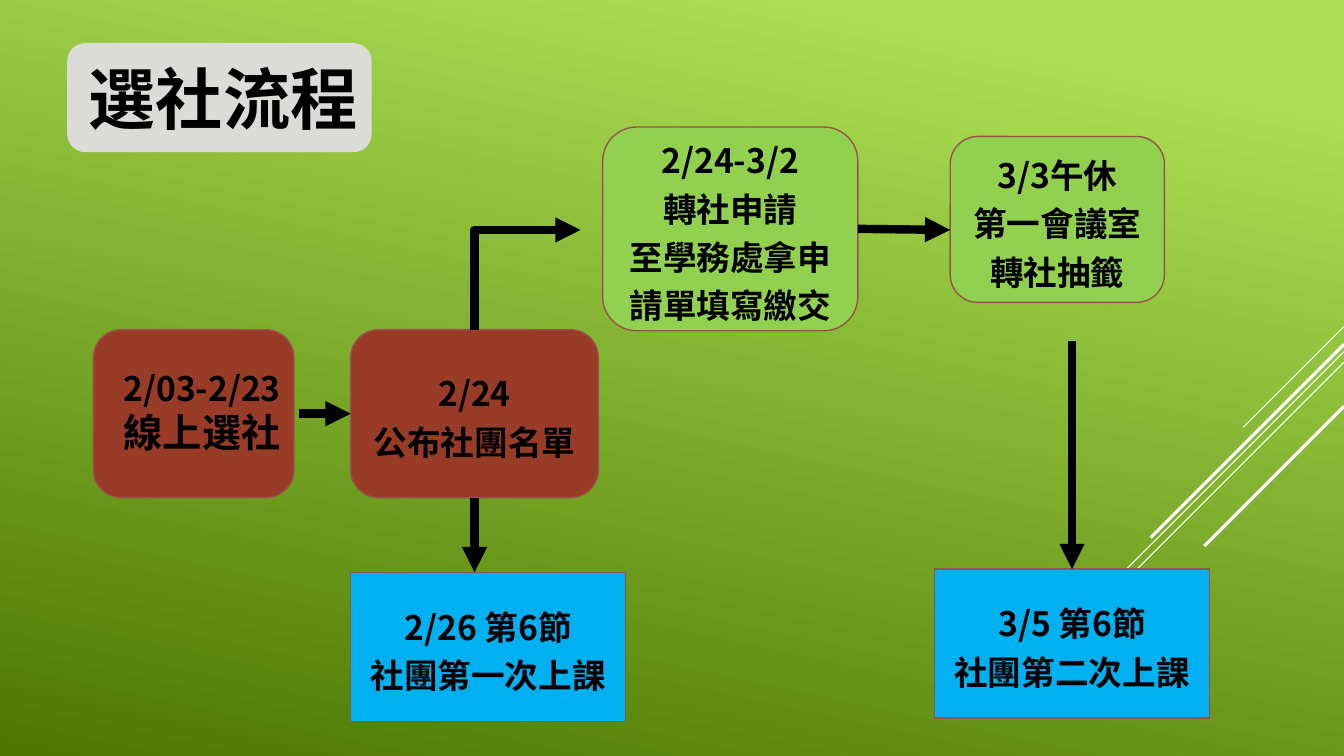
"""Builds the club selection flow slide."""
from dataclasses import dataclass

from lxml import etree
from pptx import Presentation
from pptx.dml.color import RGBColor
from pptx.enum.shapes import MSO_CONNECTOR, MSO_SHAPE
from pptx.enum.text import MSO_ANCHOR, PP_ALIGN
from pptx.oxml.ns import qn
from pptx.util import Emu, Pt

ROUNDED = MSO_SHAPE.ROUNDED_RECTANGLE
RECTANGLE = MSO_SHAPE.RECTANGLE
STRAIGHT = MSO_CONNECTOR.STRAIGHT
ELBOW = MSO_CONNECTOR.ELBOW
CENTER = PP_ALIGN.CENTER
LEFT = PP_ALIGN.LEFT
MIDDLE = MSO_ANCHOR.MIDDLE

EMU_PER_PX = 9525
PAGE_WIDTH, PAGE_HEIGHT = 1280, 720
TOP, SIDE_LEFT, BOTTOM, SIDE_RIGHT = range(4)


@dataclass(frozen=True)
class Theme:
    """Colours, fonts and type sizes of the slide."""
    light: str = "ACDF55"
    dark: str = "4C7800"
    ink: str = "000000"
    stripe: str = "FFFFFF"
    plate: str = "DBDBD8"
    border: str = "99514B"
    selection: str = "983C27"
    transfer: str = "92D050"
    lesson: str = "00B0F0"
    font: str = "Noto Sans CJK TC"
    title_font: str = "Cabin"
    title_size: int = 48
    large_size: int = 28
    body_size: int = 24


THEME = Theme()


def px(*lengths):
    """Turn px lengths into EMU."""
    return [Emu(length * EMU_PER_PX) for length in lengths]


def color(code):
    """Turn a hex code into a colour."""
    return RGBColor.from_string(code)


def paint_background(page):
    """Fill the page with the green gradient."""
    fill = page.background.fill
    fill.gradient()
    fill.gradient_angle = 258
    stops = ((0.1, THEME.light), (1, THEME.dark))
    for stop, (position, code) in zip(fill.gradient_stops, stops):
        stop.position = position
        stop.color.rgb = color(code)


def write(box, lines, align=CENTER, spacing=1.2, font=THEME.font):
    """Write (text, size) lines into a box, one paragraph each."""
    frame = box.text_frame
    frame.word_wrap = True
    for index, (text, size) in enumerate(lines):
        para = frame.add_paragraph() if index else frame.paragraphs[0]
        para.alignment = align
        para.line_spacing = spacing
        span = para.add_run()
        span.text = text
        formats = {"name": font, "size": Pt(size), "bold": True}
        for name, value in formats.items():
            setattr(span.font, name, value)
        span.font.color.rgb = color(THEME.ink)
        etree.SubElement(span.font._element, qn("a:ea"), typeface=THEME.font)


def add_label(page, bounds, lines, **formats):
    """Add free text on top of a box."""
    write(page.shapes.add_textbox(*px(*bounds)), lines, **formats)


def add_box(page, kind, bounds, fill, texts=(), border=THEME.border):
    """Add a filled box with centred body text."""
    box = page.shapes.add_shape(kind, *px(*bounds))
    box.shadow.inherit = False
    box.fill.solid()
    box.fill.fore_color.rgb = color(fill)
    if border:
        box.line.color.rgb = color(border)
        box.line.width = Pt(1)
    else:
        box.line.fill.background()
    box.text_frame.vertical_anchor = MIDDLE
    write(box, [(text, THEME.body_size) for text in texts])
    return box


def add_line(page, start, end, code, weight, kind=STRAIGHT):
    """Add a plain line without a shadow."""
    line = page.shapes.add_connector(kind, *px(*start, *end))
    line.line.color.rgb = color(code)
    line.line.width = Pt(weight)
    return line


def drop_shadow(line):
    """Give a connector an empty effect list."""
    etree.SubElement(line._element.spPr, qn("a:effectLst"))


def add_arrow(page, start, end, kind=STRAIGHT):
    """Add a thick black arrow."""
    arrow = add_line(page, start, end, THEME.ink, 6, kind)
    etree.SubElement(arrow.line._get_or_add_ln(), qn("a:tailEnd"), type="triangle")
    drop_shadow(arrow)
    return arrow


def add_corner_arrow(page, start, end):
    """Add an arrow that runs up from start and then right to end."""
    (left, bottom), (right, top) = start, end
    rise, run = bottom - top, right - left
    x = (left + right - rise) // 2
    y = (top + bottom - run) // 2
    arrow = add_arrow(page, (x, y), (x + rise, y + run), ELBOW)
    properties = arrow._element.spPr
    properties.find(qn("a:xfrm")).set("rot", "16200000")
    properties.find(qn("a:prstGeom")).set("prst", "bentConnector2")


def add_stripes(page):
    """Draw the diagonal stripes that leave the right edge at 45 degrees."""
    stripes = ((311, 96, 0.75), (335, 313, 0.75), (345, 199, 0.75),
               (328, 184, 2.25), (387, 133, 2.25))
    for top, reach, weight in stripes:
        end = (PAGE_WIDTH - reach, top + reach)
        drop_shadow(add_line(page, (PAGE_WIDTH, top), end, THEME.stripe, weight))


def add_flow(page):
    """Draw the steps and the arrows between them."""
    add_box(page, ROUNDED, (89, 314, 191, 160), THEME.selection)
    add_label(page, (100, 346, 185, 94),
              [("2/03-2/23", THEME.body_size), ("線上選社", THEME.large_size)],
              spacing=1.0)
    announce = add_box(page, ROUNDED, (334, 314, 236, 160), THEME.selection,
                       ("2/24", "公布社團名單"))
    transfer = add_box(page, ROUNDED, (574, 121, 243, 194), THEME.transfer,
                       ("2/24-3/2", "轉社申請", "至學務處拿申請單填寫繳交"))
    add_box(page, ROUNDED, (905, 130, 204, 158), THEME.transfer,
            ("3/3午休", "第一會議室", "轉社抽籤"))
    add_box(page, RECTANGLE, (334, 545, 262, 142), THEME.lesson,
            ("2/26 第6節", "社團第一次上課"))
    second = add_box(page, RECTANGLE, (890, 542, 262, 142), THEME.lesson,
                     ("3/5 第6節", "社團第二次上課"))

    add_arrow(page, (285, 394), (334, 394)).end_connect(announce, SIDE_LEFT)
    add_arrow(page, (452, 474), (452, 545)).begin_connect(announce, BOTTOM)
    add_arrow(page, (817, 218), (905, 219)).begin_connect(transfer, SIDE_RIGHT)
    add_arrow(page, (1021, 325), (1021, 542)).end_connect(second, TOP)
    add_corner_arrow(page, (452, 314), (553, 219))


def main():
    """Build and save the deck."""
    deck = Presentation()
    deck.slide_width, deck.slide_height = px(PAGE_WIDTH, PAGE_HEIGHT)
    page = deck.slides.add_slide(deck.slide_layouts[6])
    paint_background(page)
    add_stripes(page)
    add_flow(page)
    add_box(page, ROUNDED, (64, 41, 290, 104), THEME.plate, border=None)
    add_label(page, (75, 50, 321, 87), [("選社流程", THEME.title_size)],
              align=LEFT, spacing=1.0, font=THEME.title_font)
    deck.save("out.pptx")


if __name__ == "__main__":
    main()
